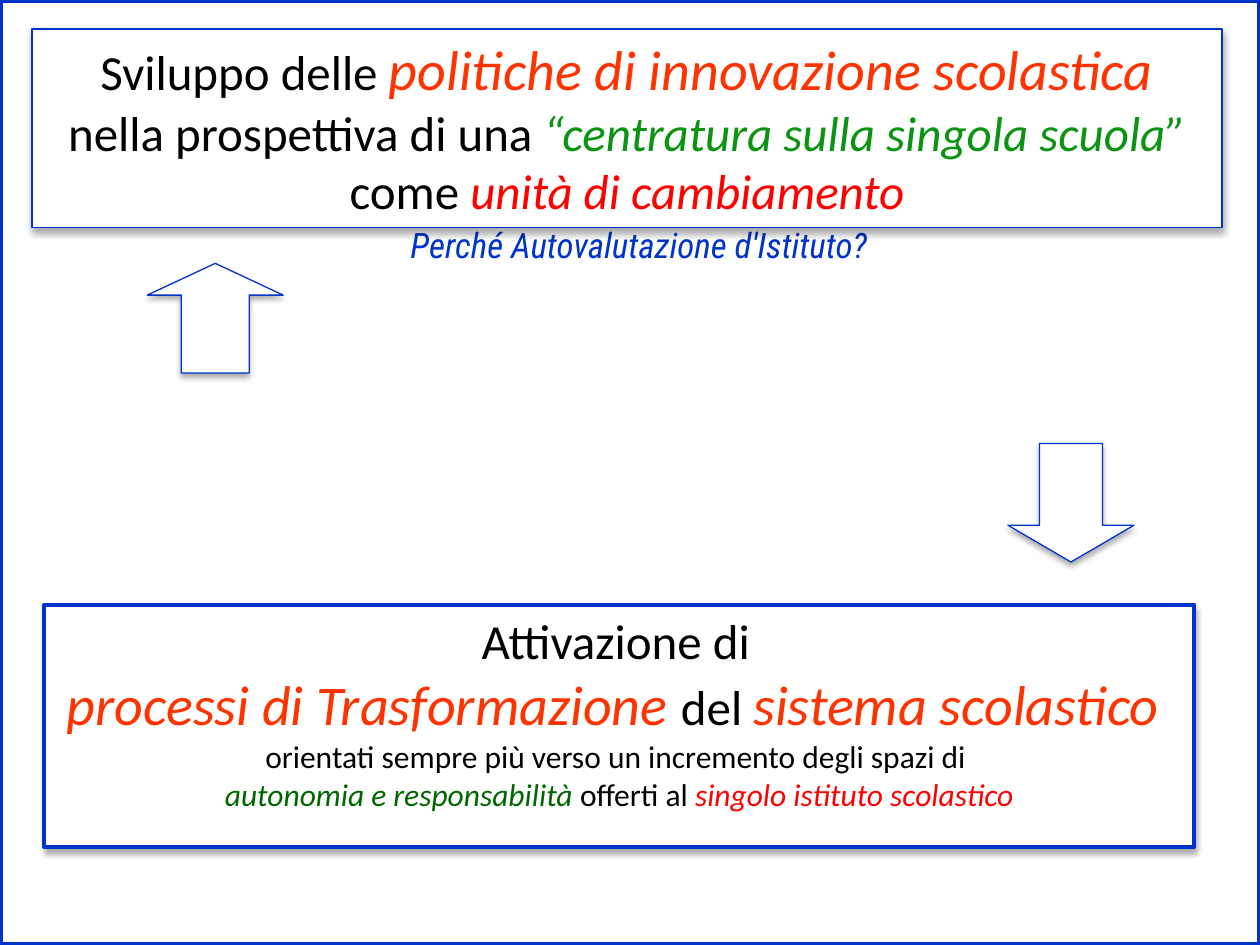
import pptx
import pptx.dml.color
import pptx.enum.shapes
import pptx.enum.text
import pptx.oxml
import pptx.oxml.ns
import pptx.util

Cm, Pt = pptx.util.Cm, pptx.util.Pt
SHAPES = pptx.enum.shapes.MSO_SHAPE

COLORS = {
    "blue": "0033CC",
    "white": "FFFFFF",
    "black": "000000",
    "orange": "FF3300",
    "red": "FF0000",
    "green": "0A9411",
    "dark green": "006600",
}

SHADOW = (
    f'<a:effectLst {pptx.oxml.ns.nsdecls("a")}>'
    f'<a:outerShdw blurRad="{Pt(3.5)}" dist="{Pt(2.2)}" dir="5400000" rotWithShape="0">'
    f'<a:srgbClr val="{COLORS["black"]}"><a:alpha val="32000"/></a:srgbClr>'
    "</a:outerShdw></a:effectLst>"
)


def rgb(name):
    return pptx.dml.color.RGBColor.from_string(COLORS[name])


class SlideBuilder:
    body_font = "Calibri"
    title_font = "Roboto Condensed"

    def __init__(self, slide):
        self.slide = slide

    def format_run(self, run, font, size, color, italic):
        run.font.name = font
        run.font.size = Pt(size)
        run.font.color.rgb = rgb(color)
        run.font.bold = False
        run.font.italic = italic

    def set_frame(self, text_frame):
        text_frame.word_wrap = True
        text_frame.auto_size = pptx.enum.text.MSO_AUTO_SIZE.NONE
        text_frame.vertical_anchor = pptx.enum.text.MSO_ANCHOR.TOP

    def title(self, text, left, top, width, height):
        title = self.slide.shapes.title
        title.left, title.top = Cm(left), Cm(top)
        title.width, title.height = Cm(width), Cm(height)
        title.text_frame.text = text
        self.set_frame(title.text_frame)
        paragraph = title.text_frame.paragraphs[0]
        paragraph.alignment = pptx.enum.text.PP_ALIGN.CENTER
        self.format_run(paragraph.runs[0], self.title_font, 20, "blue", True)

    def outline(self, kind, left, top, width, height, line_width):
        """Add an unfilled preset shape with a blue line and no shadow."""
        shape = self.slide.shapes.add_shape(kind, Cm(left), Cm(top), Cm(width), Cm(height))
        shape.shadow.inherit = False
        shape.fill.background()
        shape.line.color.rgb = rgb("blue")
        shape.line.width = Pt(line_width)
        return shape

    def raised(self, kind, left, top, width, height, line_width):
        """Add a white preset shape with a blue line and a soft shadow below."""
        shape = self.outline(kind, left, top, width, height, line_width)
        shape.fill.solid()
        shape.fill.fore_color.rgb = rgb("white")
        properties = shape._element.spPr
        properties.remove(properties.find(pptx.oxml.ns.qn("a:effectLst")))
        properties.append(pptx.oxml.parse_xml(SHADOW))
        return shape

    def arrow(self, kind, left, top, width, height, head):
        arrow = self.raised(kind, left, top, width, height, 0.75)
        arrow.adjustments[0] = 0.5
        arrow.adjustments[1] = head

    def statement(self, lines, left, top, width, height, line_width):
        """Add a box of centred lines, each a list of (text, size, colour);
        everything that is not black is emphasised in italics."""
        box = self.raised(SHAPES.RECTANGLE, left, top, width, height, line_width)
        frame = box.text_frame
        self.set_frame(frame)
        for index, line in enumerate(lines):
            paragraph = frame.add_paragraph() if index else frame.paragraphs[0]
            paragraph.alignment = pptx.enum.text.PP_ALIGN.CENTER
            for text, size, color in line:
                run = paragraph.add_run()
                run.text = text
                self.format_run(run, self.body_font, size, color, color != "black")


POLICIES = [
    [("Sviluppo delle ", 28, "black"),
     ("politiche di innovazione scolastica", 32, "orange")],
    [("nella prospettiva di una ", 28, "black"),
     ("“centratura sulla singola scuola”", 28, "green")],
    [("come ", 28, "black"), ("unità di cambiamento", 28, "red")],
]

PROCESSES = [
    [("Attivazione di", 28, "black"), (" ", 18, "black")],
    [("processi di Trasformazione ", 32, "orange"),
     ("del ", 28, "black"),
     ("sistema scolastico ", 32, "orange")],
    [("orientati sempre più verso un incremento degli spazi di ", 18, "black")],
    [("autonomia e responsabilità ", 18, "dark green"),
     ("offerti al ", 18, "black"),
     ("singolo istituto scolastico", 18, "red")],
]


def main():
    deck = pptx.Presentation()
    deck.slide_width, deck.slide_height = Cm(25.4), Cm(19.05)
    title_only = deck.slide_layouts[5]
    builder = SlideBuilder(deck.slides.add_slide(title_only))

    builder.title(" Perché Autovalutazione d'Istituto?", 1.27, 4.37, 23.06, 7.62)
    builder.outline(SHAPES.RECTANGLE, 0, 0, 25.4, 19.05, 3)
    builder.statement(PROCESSES, 0.89, 12.19, 23.19, 4.88, 2.25)
    builder.arrow(SHAPES.DOWN_ARROW, 20.32, 8.94, 2.54, 2.39, 0.31)
    builder.statement(POLICIES, 0.64, 0.58, 24, 4.01, 1)
    builder.arrow(SHAPES.UP_ARROW, 2.97, 5.31, 2.74, 2.21, 0.29)

    deck.save("out.pptx")


if __name__ == "__main__":
    main()
